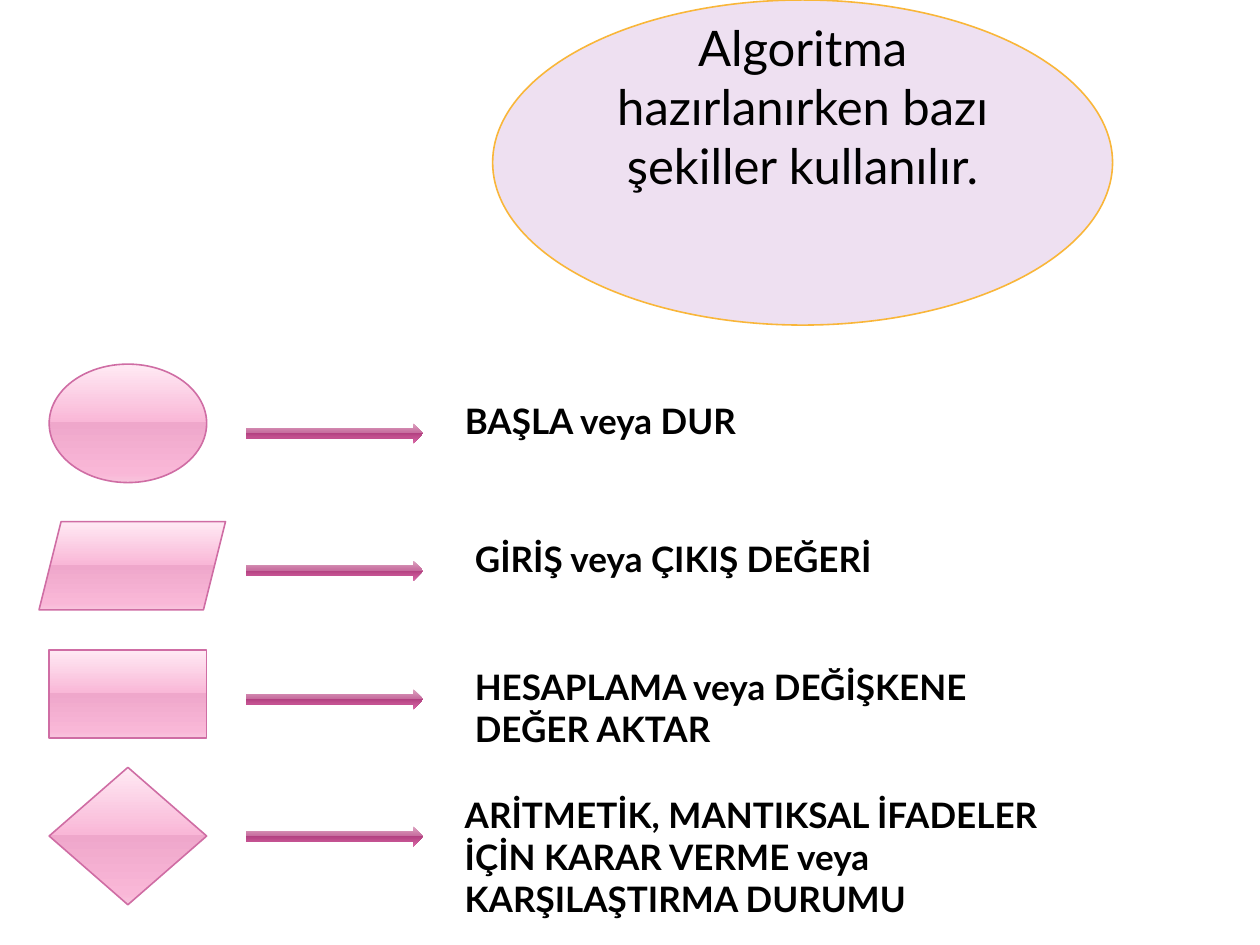
from dataclasses import dataclass

from lxml.etree import SubElement
from pptx import Presentation
from pptx.dml.color import RGBColor
from pptx.enum.shapes import MSO_SHAPE as Shape
from pptx.enum.text import MSO_ANCHOR as Anchor, MSO_AUTO_SIZE as AutoSize, PP_ALIGN as Align
from pptx.oxml.ns import qn
from pptx.util import Inches, Pt

FONT = "Lato"
STOP_POSITIONS = (0, 49, 49, 92, 100)
SYMBOL_COLORS = ("FFEAF4", "F9B7D7", "EFA7CB", "F9B7D7", "F8C4DD")
ARROW_COLORS = ("DDA4C1", "C66B9D", "B34181", "D361A0", "DC79AE")


@dataclass
class Box:
    left: float
    top: float
    width: float
    height: float

    def lengths(self) -> tuple:
        return tuple(Inches(v) for v in (self.left, self.top, self.width, self.height))


@dataclass
class Step:
    symbol: Shape
    symbol_box: Box
    arrow_top: float
    label_box: Box
    label: str


STEPS = (
    Step(Shape.OVAL, Box(0.39, 2.89, 1.25, 0.94), 3.36,
         Box(3.59, 3.12, 3.28, 0.44), "BAŞLA veya DUR"),
    Step(Shape.PARALLELOGRAM, Box(0.31, 4.14, 1.48, 0.7), 4.45,
         Box(3.67, 4.22, 3.91, 0.44), "GİRİŞ veya ÇIKIŞ DEĞERİ"),
    Step(Shape.RECTANGLE, Box(0.39, 5.16, 1.25, 0.7), 5.47,
         Box(3.67, 5.23, 5, 0.77), "HESAPLAMA veya DEĞİŞKENE DEĞER AKTAR"),
    Step(Shape.DIAMOND, Box(0.39, 6.09, 1.25, 1.09), 6.56,
         Box(3.59, 6.25, 5, 1.11),
         "ARİTMETİK, MANTIKSAL İFADELER İÇİN KARAR VERME veya KARŞILAŞTIRMA DURUMU"),
)


def color(value: str) -> RGBColor:
    return RGBColor.from_string(value)


def add_figure(slide, kind: Shape, box: Box, outline: str = ""):
    figure = slide.shapes.add_shape(kind, *box.lengths())
    figure.shadow.inherit = False
    if outline:
        figure.line.color.rgb = color(outline)
        figure.line.width = Pt(0.9)
    else:
        figure.line.fill.background()
    return figure


def fill_gradient(figure, colors: tuple) -> None:
    """Fill from top to bottom with one colour at each stop position."""
    figure.fill.gradient()
    figure.fill.gradient_angle = 270
    stops = figure.element.spPr.find(".//" + qn("a:gsLst"))
    for default_stop in list(stops):
        stops.remove(default_stop)
    for position, value in zip(STOP_POSITIONS, colors):
        stop = SubElement(stops, qn("a:gs"), pos=str(position * 1000))
        SubElement(stop, qn("a:srgbClr"), val=value)


def write(paragraph, text: str, size: float, bold: bool = False) -> None:
    run = paragraph.add_run()
    run.text = text
    run.font.name = FONT
    run.font.size = Pt(size)
    run.font.bold = bold
    run.font.color.rgb = color("000000")


def add_heading(slide) -> None:
    bubble = add_figure(slide, Shape.OVAL, Box(3.91, 0, 4.92, 2.58), "F9B639")
    bubble.fill.solid()
    bubble.fill.fore_color.rgb = color("EEE0F1")

    title = slide.shapes.title
    title.left, title.top, title.width, title.height = Box(4.63, 0.14, 3.48, 1.4).lengths()
    frame = title.text_frame
    frame.auto_size = AutoSize.NONE
    frame.word_wrap = True
    frame.vertical_anchor = Anchor.TOP
    frame.margin_top = frame.margin_bottom = 0
    frame.paragraphs[0].alignment = Align.CENTER
    write(frame.paragraphs[0], "Algoritma hazırlanırken bazı şekiller kullanılır.", 28)
    # Bring the title in front of its bubble
    bubble.element.addnext(title.element)


def add_step(slide, step: Step) -> None:
    symbol = add_figure(slide, step.symbol, step.symbol_box, "CF6DA4")
    fill_gradient(symbol, SYMBOL_COLORS)

    arrow = add_figure(slide, Shape.RIGHT_ARROW, Box(1.95, step.arrow_top, 1.41, 0.16))
    fill_gradient(arrow, ARROW_COLORS)

    frame = slide.shapes.add_textbox(*step.label_box.lengths()).text_frame
    frame.word_wrap = True
    frame.auto_size = AutoSize.SHAPE_TO_FIT_TEXT
    write(frame.paragraphs[0], step.label, 20, bold=True)


def main() -> None:
    deck = Presentation()
    deck.slide_width, deck.slide_height = Inches(10), Inches(7.5)
    slide = deck.slides.add_slide(deck.slide_layouts[5])  # title only

    add_heading(slide)
    # Flowchart symbols and their meanings
    for step in STEPS:
        add_step(slide, step)

    deck.save("out.pptx")


if __name__ == "__main__":
    main()
